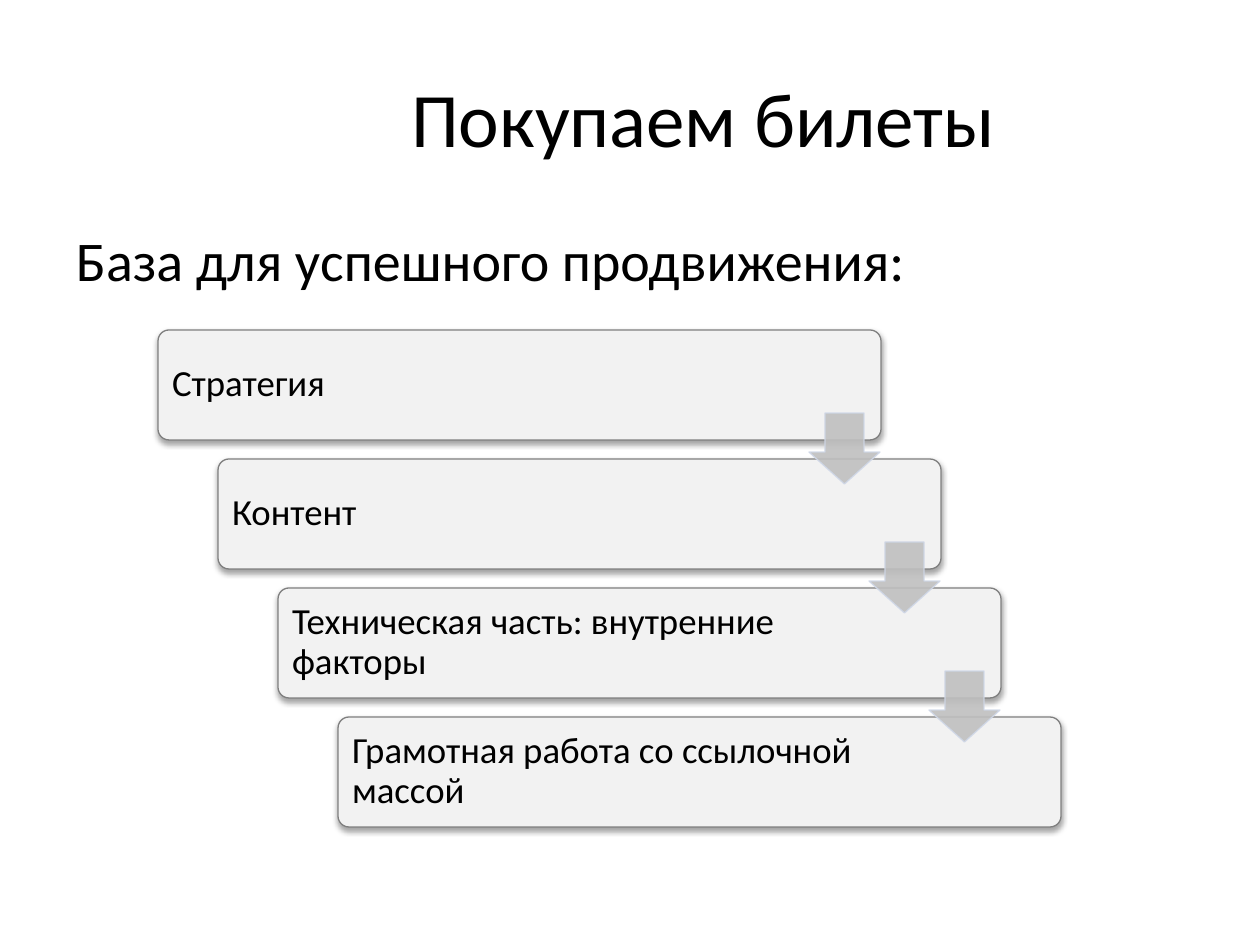
from lxml import etree
from pptx import Presentation
from pptx import util as u
from pptx.dml.color import RGBColor
from pptx.enum import shapes, text
from pptx.oxml import parse_xml
from pptx.oxml.ns import nsdecls, qn

SCALE = 914400 / 126
HUES = {"ink": "000000", "card": "F2F2F2", "edge": "7F7F7F",
        "arrow": "BFBFBF", "rim": "D0D8E8"}
STEPS = ["Стратегия", "Контент", "Техническая часть: внутренние факторы",
         "Грамотная работа со ссылочной массой"]


def px(n):
    """Turn pixels into EMU."""
    return u.Emu(round(n * SCALE))


def hue(name):
    """Look up a colour by name."""
    return RGBColor.from_string(HUES[name])


def label(slide, box, words, size, pad=(13, 6), mid=True, align=text.PP_ALIGN.LEFT, gap=None):
    """Add a wrapped text box with one run."""
    frame = slide.shapes.add_textbox(*map(px, box)).text_frame
    frame.word_wrap = True
    frame.margin_left = frame.margin_right = px(pad[0])
    frame.margin_top = frame.margin_bottom = px(pad[1])
    frame.vertical_anchor = text.MSO_ANCHOR.MIDDLE if mid else text.MSO_ANCHOR.TOP
    para = frame.paragraphs[0]
    para.alignment = align
    para.line_spacing = gap
    run = para.add_run()
    run.text = words
    run.font.size = u.Pt(size)
    run.font.name = "Calibri"
    run.font.color.rgb = hue("ink")


def block(slide, kind, box, adjs, fill, line):
    """Add a filled, outlined preset shape without shadow."""
    shape = slide.shapes.add_shape(kind, *map(px, box))
    shape.shadow.inherit = False
    for i, adj in enumerate(adjs):
        shape.adjustments[i] = adj
    shape.fill.solid()
    shape.fill.fore_color.rgb = hue(fill)
    shape.line.color.rgb = hue(line)
    shape.line.width = u.Pt(0.75)
    return shape


def shade(shape):
    """Give a shape a soft shadow below it."""
    glow = shape._element.spPr.find(qn("a:effectLst"))
    glow.append(parse_xml(
        f'<a:outerShdw {nsdecls("a")} blurRad="40000" dist="23000" dir="5400000" '
        f'rotWithShape="0"><a:srgbClr val="{HUES["ink"]}"><a:alpha val="35000"/>'
        '</a:srgbClr></a:outerShdw>'))


def card(slide, x, y, words):
    """Add one step card with its text."""
    shade(block(slide, shapes.MSO_SHAPE.ROUNDED_RECTANGLE, (x, y, 723, 110),
                [0.1], "card", "edge"))
    label(slide, (x + 3, y + 3, 585, 103), words, 21, pad=(11, 11), gap=0.9)


def arrow(slide, x, y):
    """Add a slightly transparent down arrow."""
    shape = block(slide, shapes.MSO_SHAPE.DOWN_ARROW, (x, y, 71, 71),
                  [0.45, 0.55], "arrow", "rim")
    shape.adjustments[0], shape.adjustments[1] = 0.55, 0.45
    for tone in shape._element.spPr.iter(qn("a:srgbClr")):
        etree.SubElement(tone, qn("a:alpha")).set("val", "90000")


def main():
    """Build and save the slide."""
    deck = Presentation()
    deck.slide_width, deck.slide_height = px(1260), px(945)
    slide = deck.slides.add_slide(deck.slide_layouts[6])
    label(slide, (262, 38, 883, 157), "Покупаем билеты", 44, align=text.PP_ALIGN.CENTER)
    label(slide, (63, 220, 1082, 87), "База для успешного продвижения:", 32, mid=False)
    for i, words in enumerate(STEPS):
        card(slide, 158 + 60 * i, 330 + 129 * i, words)
    for i in range(len(STEPS) - 1):
        arrow(slide, 809 + 60 * i, 413 + 129 * i)
    deck.save("out.pptx")


if __name__ == "__main__":
    main()
